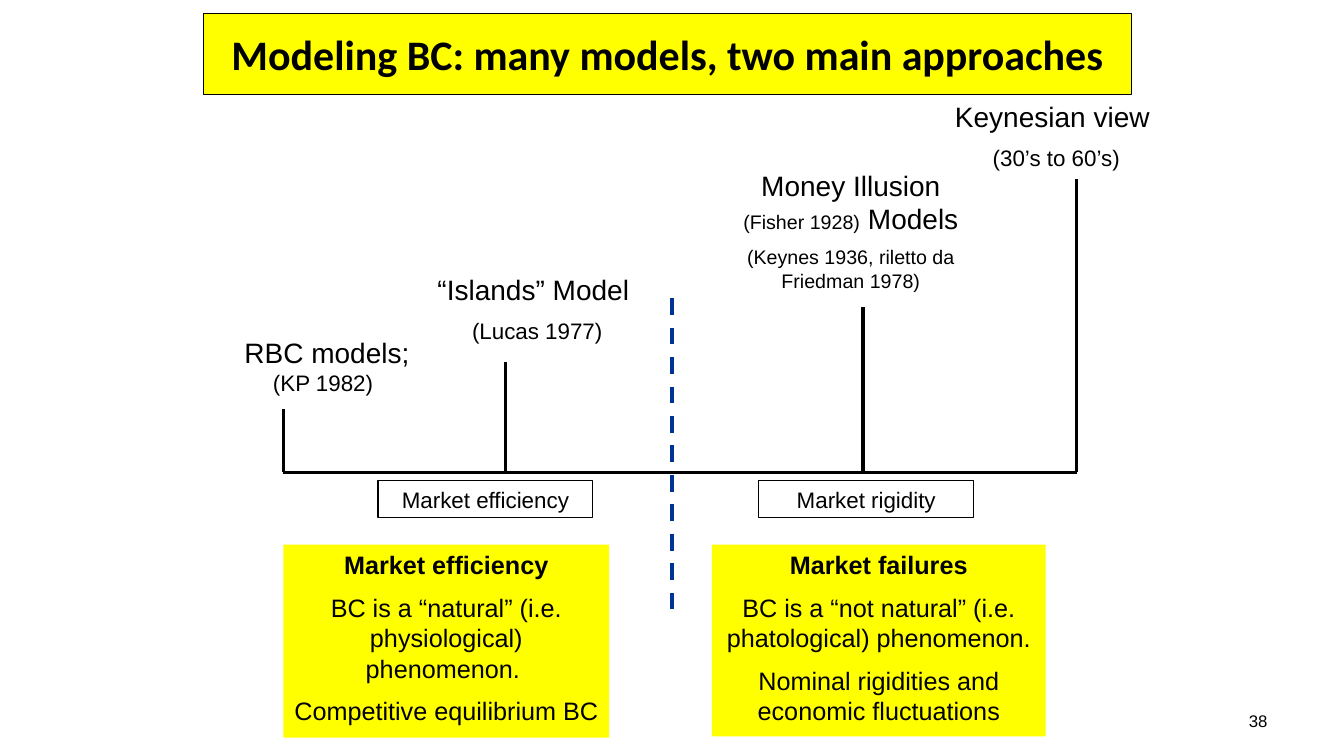
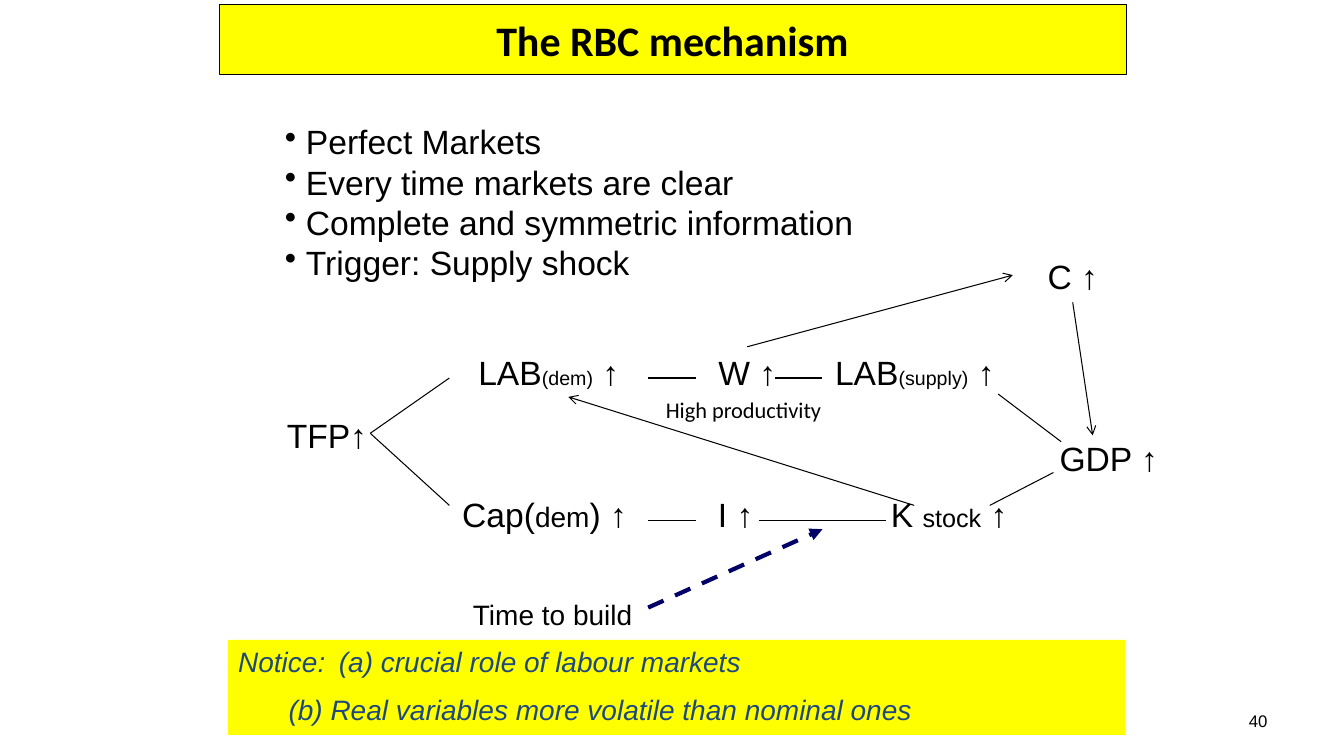
from pptx import Presentation
from pptx.dml.color import RGBColor
from pptx.enum.dml import MSO_LINE
from pptx.enum.shapes import MSO_CONNECTOR, MSO_SHAPE
from pptx.enum.text import MSO_ANCHOR, PP_ALIGN
from pptx.oxml.ns import qn
from pptx.oxml.xmlchemy import OxmlElement
from pptx.util import Pt

BLACK = RGBColor(0, 0, 0)
YELLOW = RGBColor(0xFF, 0xFF, 0)
BLUE = RGBColor(0, 0x33, 0x99)
NAVY = RGBColor(0, 0, 0x66)
SLATE = RGBColor(0x1F, 0x49, 0x7D)
LEFT, CENTER, RIGHT = PP_ALIGN.LEFT, PP_ALIGN.CENTER, PP_ALIGN.RIGHT
TOP, MIDDLE = MSO_ANCHOR.TOP, MSO_ANCHOR.MIDDLE
RECT = MSO_SHAPE.RECTANGLE
STRAIGHT = MSO_CONNECTOR.STRAIGHT
DASH = MSO_LINE.DASH


def add_box(slide, x, y, w, h, paras, align=CENTER, anchor=TOP, fill=None,
            edge=False, ink=BLACK, font="Arial", gap=0.5, bullet=None):
    """Each paragraph is a list of (text, size, style) runs; style holds b or i."""
    area = Pt(x), Pt(y), Pt(w), Pt(h)
    if fill or edge:
        box = slide.shapes.add_shape(RECT, *area)
        box.shadow.inherit = False
        if fill:
            box.fill.solid()
            box.fill.fore_color.rgb = fill
        else:
            box.fill.background()
        if edge:
            box.line.color.rgb = BLACK
            box.line.width = Pt(0.75)
        else:
            box.line.fill.background()
    else:
        box = slide.shapes.add_textbox(*area)
    frame = box.text_frame
    frame.word_wrap = True
    frame.vertical_anchor = anchor
    for i, runs in enumerate(paras):
        para = frame.add_paragraph() if i else frame.paragraphs[0]
        para.alignment = align
        para.space_before = Pt(gap * runs[0][1] if i else 0)
        if bullet:
            props = para._p.get_or_add_pPr()
            props.set("marL", str(Pt(15)))
            props.set("indent", str(-Pt(15)))
            mark = OxmlElement("a:buChar")
            mark.set("char", bullet)
            props.append(mark)
        for text, size, style in runs:
            run = para.add_run()
            run.text = text
            run.font.name = font
            run.font.size = Pt(size)
            run.font.bold = "b" in style
            run.font.italic = "i" in style
            run.font.color.rgb = ink
    return box


def add_line(slide, x1, y1, x2, y2, width=0.75, color=BLACK, dash=None, tip=None):
    line = slide.shapes.add_connector(STRAIGHT, Pt(x1), Pt(y1), Pt(x2), Pt(y2))
    line.line.color.rgb = color
    line.line.width = Pt(width)
    if dash:
        line.line.dash_style = dash
    props = line._element.spPr
    if tip:
        end = OxmlElement("a:tailEnd")
        end.set("type", tip)
        props.find(qn("a:ln")).append(end)
    props.append(OxmlElement("a:effectLst"))
    return line


deck = Presentation()
deck.slide_width, deck.slide_height = Pt(960), Pt(540)

# Title band and page number
pages = []
for title, band, number in [
    ("Modeling BC: many models, two main approaches", (145.5, 9.5, 663, 58), "38"),
    ("The RBC mechanism", (156.5, 3.5, 648, 49.5), "40"),
]:
    page = deck.slides.add_slide(deck.slide_layouts[6])
    add_box(page, *band, [[(title, 30, "b")]], anchor=MIDDLE, fill=YELLOW,
            edge=True, font="Calibri")
    add_box(page, 688.5, 500.5, 224, 29, [[(number, 12, "")]], RIGHT, MIDDLE)
    pages.append(page)
models, cycle = pages

# Models: axis, stems and divider
START, END, BASE = 202.5, 769, 337.5
add_line(models, START, BASE, END, BASE, 2.25)
for x, y in [(START, 292.5), (361, 258.5), (616.5, 219), (END, 128)]:
    add_line(models, x, BASE, x, y, 2.25)
add_line(models, 480, 213, 480, 440, 3, BLUE, DASH)

# Models: the two views
for x, w, h, lines in [
    (START, 232.6, 138, ["Market efficiency",
                         "BC is a “natural” (i.e. physiological) phenomenon. ",
                         "Competitive equilibrium BC"]),
    (508.5, 238.5, 137, ["Market failures",
                         "BC is a “not natural” (i.e. phatological) phenomenon.",
                         "Nominal rigidities and economic fluctuations"]),
]:
    paras = [[(text, 18, "" if i else "b")] for i, text in enumerate(lines)]
    add_box(models, x, 389, w, h, paras, fill=YELLOW)

# Models: names above the stems
for x, y, w, h, paras in [
    (672.5, 67.5, 164, 60.5, [[("Keynesian view ", 20, "")],
                              [("(30’s to 60’s)", 16, "")]]),
    (520, 116.5, 175.5, 98, [[("Money Illusion ", 20, ""), ("(Fisher 1928)", 14, ""),
                              (" Models", 20, "")],
                             [("(Keynes 1936, riletto da Friedman 1978)", 14, "")]]),
    (304.5, 191, 158.5, 60.5, [[("“Islands” Model ", 20, "")],
                               [("(Lucas 1977)", 16, "")]]),
    (157, 236, 147.5, 51, [[(" RBC models; ", 20, ""), ("(KP 1982)", 16, "")]]),
]:
    add_box(models, x, y, w, h, paras)

# Models: tags under the axis
for x, tag in [(270, "Market efficiency"), (542, "Market rigidity")]:
    add_box(models, x, 343.5, 153.5, 26.5, [[(tag, 16, "")]], edge=True)

# Cycle: assumptions
facts = ["Perfect Markets", "Every time markets are clear",
         "Complete and symmetric information", "Trigger: Supply shock"]
add_box(cycle, 196.5, 83, 595.5, 124, [[(fact, 24, "")] for fact in facts],
        LEFT, gap=0, bullet="•")

# Cycle: variables
LABOR, FUNDS = 247.7, 349.2
nodes = {}
for name, x, y, w, runs in [
    ("TFP", 191, 292.5, 85, [("TFP↑", 24)]),
    ("demand", 321, LABOR, 142, [("LAB", 24), ("(dem)", 14), (" ↑", 24)]),
    ("wage", 497, LABOR, 73.5, [("W ↑", 24)]),
    ("supply", 582.5, LABOR, 142, [("LAB", 24), ("(supply)", 14), (" ↑", 24)]),
    ("cap", 321, FUNDS, 136, [("Cap(", 24), ("dem", 20), (") ↑", 24)]),
    ("invest", 497, FUNDS, 57, [("I ↑", 24)]),
    ("stock", 627, FUNDS, 102, [("K ", 24), ("stock", 18), (" ↑", 24)]),
    ("GDP", 746.5, 309.5, 91, [("GDP ↑", 24)]),
    ("C", 729.5, 179.5, 73.5, [("C ↑", 24)]),
    ("time", 315.5, 423.5, 158.5, [("Time to build", 20)]),
]:
    nodes[name] = add_box(cycle, x, y, w, 36.5, [[(*run, "") for run in runs]])
add_box(cycle, 468.5, 279.5, 130.5, 26.5, [[("High productivity", 16, "")]],
        LEFT, font="Calibri")

# Cycle: plain links
for ends in [
    (264.5, 309.5, 321, 270), (264.5, 309.5, 321, 361),
    (463, 270, 497, 270), (553.5, 270, 587.5, 270),
    (463, 372, 497, 372), (542, 372, 633, 372),
    (713, 281.5, 758, 315.5), (707, 361, 752.5, 337.5),
]:
    add_line(cycle, *ends)

# Cycle: arrows
add_line(cycle, 463, 434, 587.5, 378, 3, NAVY, DASH, "triangle")
add_line(cycle, 653, 361, 406, 283.5, tip="arrow")
spend = add_line(cycle, 533.5, 247.5, 723.5, 196.5, tip="arrow")
spend.begin_connect(nodes["wage"], 0)
output = add_line(cycle, 766, 216, 780.5, 311, tip="arrow")
output.begin_connect(nodes["C"], 2)

# Cycle: notice
add_box(cycle, 163, 457, 641, 68,
        [[("Notice: \t(a) crucial role of labour markets", 20, "i")],
         [("\t(b) Real variables more volatile than nominal ones", 20, "i")]],
        LEFT, fill=YELLOW, ink=SLATE)

deck.save("out.pptx")
